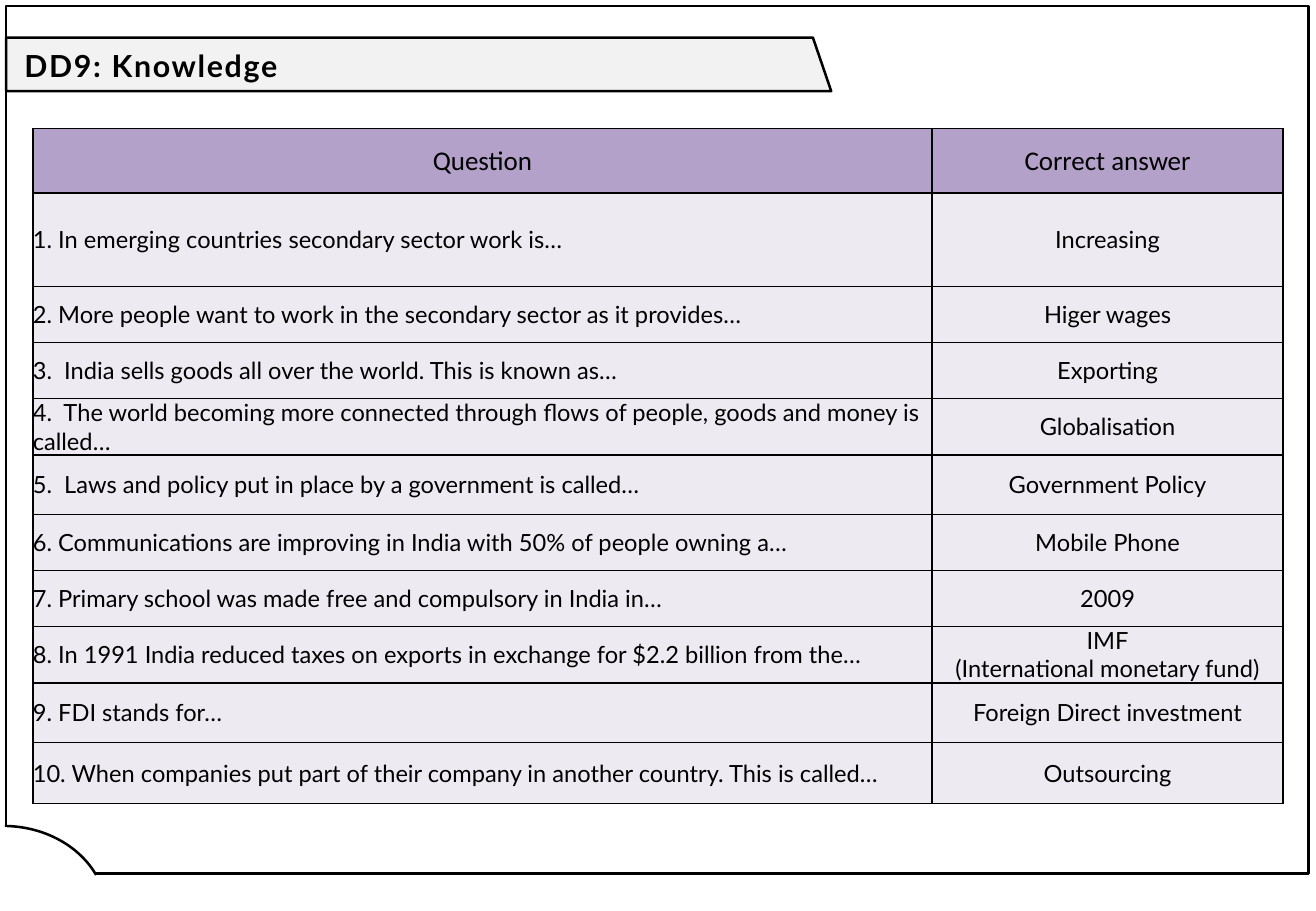
from pptx import Presentation
from pptx.dml.color import RGBColor
from pptx.enum.shapes import MSO_SHAPE
from pptx.enum.text import MSO_ANCHOR, MSO_AUTO_SIZE, PP_ALIGN
from pptx.oxml.ns import qn
from pptx.util import Pt
from lxml.etree import SubElement

PX = 9144  # 100 px to the inch
BLACK = RGBColor(0x00, 0x00, 0x00)
WHITE = RGBColor(0xFF, 0xFF, 0xFF)
GREY = RGBColor(0xF2, 0xF2, 0xF2)
PURPLE = RGBColor(0xB4, 0xA1, 0xCA)
LILAC = RGBColor(0xED, 0xEA, 0xF1)

HEAD = ("Question", "Correct answer")
ROWS = [
    ("1. In emerging countries secondary sector work is…", "Increasing"),
    ("2. More people want to work in the secondary sector as it provides…", "Higer wages"),
    ("3.  India sells goods all over the world. This is known as…", "Exporting"),
    ("4.  The world becoming more connected through flows of people, "
     "goods and money is called…", "Globalisation"),
    ("5.  Laws and policy put in place by a government is called…", "Government Policy"),
    ("6. Communications are improving in India with 50% of people owning a…", "Mobile Phone"),
    ("7. Primary school was made free and compulsory in India in…", "2009"),
    ("8. In 1991 India reduced taxes on exports in exchange for $2.2 billion from the…",
     "IMF\n(International monetary fund)"),
    ("9. FDI stands for…", "Foreign Direct investment"),
    ("10. When companies put part of their company in another country. This is called…",
     "Outsourcing"),
]
WIDTHS = (740, 289)
HEIGHTS = (53, 77, 46, 46, 46, 49, 46, 46, 46, 49, 50)


def emu(*box):
    return [n * PX for n in box]


def paint(shape, fill=None, line=BLACK):
    shape.shadow.inherit = False
    if fill is None:
        shape.fill.background()
    else:
        shape.fill.solid()
        shape.fill.fore_color.rgb = fill
    if line is None:
        shape.line.fill.background()
    else:
        shape.line.color.rgb = line
        shape.line.width = Pt(1.5)


def add_text(para, text, size, face, bold=False):
    run = para.add_run()
    run.text = text
    run.font.size = Pt(size)
    run.font.name = face
    run.font.bold = bold
    run.font.color.rgb = BLACK
    return run


def draw_banner(slide, x, y, w, h, slant):
    pen = slide.shapes.build_freeform(x, y, scale=PX)
    pen.add_line_segments([(x + w - slant, y), (x + w, y + h), (x, y + h)])
    paint(pen.convert_to_shape(), GREY)


def draw_frame(slide, x, y, w, h):
    shapes = slide.shapes
    paint(shapes.add_shape(MSO_SHAPE.RECTANGLE, *emu(x, y, w, h)))

    # Curved cut in the bottom left corner
    foot = y + h
    arc = shapes.add_shape(MSO_SHAPE.ARC, *emu(x - 87, foot - 39, 170, 145))
    arc.adjustments[0] = 162.525
    arc.adjustments[1] = 202.265
    paint(arc, WHITE)
    patch = shapes.add_shape(MSO_SHAPE.RECTANGLE, *emu(x - 4, foot - 38, 5, 10))
    paint(patch, WHITE, None)


def add_edges(cell):
    props = cell._tc.get_or_add_tcPr()
    for side in ("lnL", "lnR", "lnT", "lnB"):
        edge = SubElement(props, qn("a:" + side), w=str(Pt(1)))
        fill = SubElement(edge, qn("a:solidFill"))
        SubElement(fill, qn("a:srgbClr"), val=str(BLACK))


def fill_cell(cell, text, color, size, face, align):
    add_edges(cell)
    cell.fill.solid()
    cell.fill.fore_color.rgb = color
    cell.vertical_anchor = MSO_ANCHOR.MIDDLE
    cell.margin_left = cell.margin_right = 0
    cell.margin_top = cell.margin_bottom = 0
    frame = cell.text_frame
    for i, line in enumerate(text.split("\n")):
        para = frame.add_paragraph() if i else frame.paragraphs[0]
        para.alignment = align
        add_text(para, line, size, face)


def draw_table(slide, x, y):
    box = emu(x, y, sum(WIDTHS), sum(HEIGHTS))
    table = slide.shapes.add_table(len(HEIGHTS), len(WIDTHS), *box).table
    table.first_row = table.horz_banding = False
    for col, w in zip(table.columns, WIDTHS):
        col.width = w * PX
    for row, h in zip(table.rows, HEIGHTS):
        row.height = h * PX

    # Header row, then questions on the left and answers centred
    for c, text in enumerate(HEAD):
        fill_cell(table.cell(0, c), text, PURPLE, 16, "Calibri", PP_ALIGN.CENTER)
    for r, pair in enumerate(ROWS, 1):
        for c, text in enumerate(pair):
            align = PP_ALIGN.CENTER if c else PP_ALIGN.LEFT
            fill_cell(table.cell(r, c), text, LILAC, 14, "Lato", align)


def place_title(slide, text, *box):
    title = slide.shapes.title
    title.left, title.top, title.width, title.height = emu(*box)
    slide.shapes._spTree.append(title._element)  # in front of the banner
    frame = title.text_frame
    frame.word_wrap = True
    frame.auto_size = MSO_AUTO_SIZE.NONE
    frame.vertical_anchor = MSO_ANCHOR.MIDDLE
    para = frame.paragraphs[0]
    para.alignment = PP_ALIGN.LEFT
    para.line_spacing = 1.07
    para.space_after = Pt(8)
    run = add_text(para, text, 18, "Lato", True)
    run.font._element.set("spc", "100")


def main():
    deck = Presentation()
    deck.slide_width, deck.slide_height = emu(1083, 750)
    slide = deck.slides.add_slide(deck.slide_layouts[5])
    draw_banner(slide, 5, 31, 679, 44, 15)
    draw_frame(slide, 5, 5, 1072, 714)
    draw_table(slide, 27, 106)
    place_title(slide, "DD9: Knowledge", 10, 21, 643, 63)
    deck.save("out.pptx")


if __name__ == "__main__":
    main()
